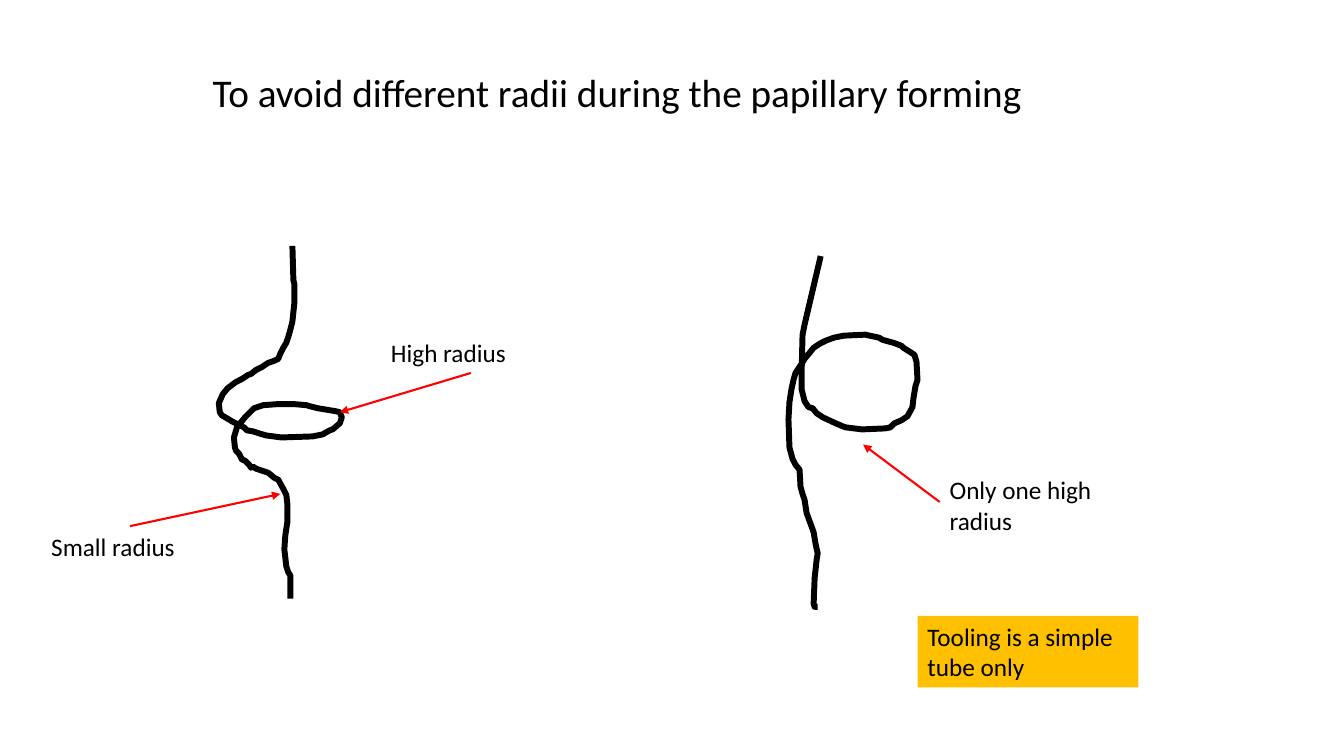
from lxml import etree
from pptx import Presentation
from pptx.dml.color import RGBColor
from pptx.enum.shapes import MSO_CONNECTOR, MSO_SHAPE
from pptx.enum.text import MSO_ANCHOR, MSO_AUTO_SIZE, PP_ALIGN
from pptx.oxml.ns import qn
from pptx.util import Inches, Pt

STRAIGHT = MSO_CONNECTOR.STRAIGHT
RECT = MSO_SHAPE.RECTANGLE
TOP = MSO_ANCHOR.TOP
LEFT = PP_ALIGN.LEFT
FIXED = MSO_AUTO_SIZE.NONE
UNIT = Inches(0.01)  # curve points are in hundredths of an inch


def color(code):
    return RGBColor.from_string(code)


def write(shape, text, box, size=18, ink="000000", fill=None):
    """Place the shape and fill it with left-aligned text."""
    shape.left, shape.top, shape.width, shape.height = map(Inches, box)
    frame = shape.text_frame
    frame.word_wrap = True
    frame.auto_size = FIXED
    frame.vertical_anchor = TOP
    para = frame.paragraphs[0]
    para.alignment = LEFT
    run = para.add_run()
    run.text = text
    run.font.name = "Calibri"
    run.font.size = Pt(size)
    run.font.color.rgb = color(ink)
    if fill:
        shape.shadow.inherit = False
        shape.fill.solid()
        shape.fill.fore_color.rgb = color(fill)
        shape.line.fill.background()


deck = Presentation()
deck.slide_width, deck.slide_height = Inches(13.33), Inches(7.5)
slide = deck.slides.add_slide(deck.slide_layouts[5])
shapes = slide.shapes

write(shapes.title, "To avoid different radii during the papillary forming",
      (2.01, 0.63, 8.37, 0.57), size=28)

# Cross-sections of the formed tube: two radii, then one
flat_loop = [
    (290, 244), (291, 278), (292, 282), (292, 300), (290, 319), (288, 327),
    (286, 334), (284, 340), (281, 345), (278, 351), (276, 356), (272, 358),
    (266, 360), (260, 364), (254, 367), (249, 371), (246, 372), (240, 376),
    (234, 379), (226, 385), (221, 391), (217, 400), (218, 409), (220, 412),
    (230, 418), (236, 421), (242, 424), (245, 427), (251, 428), (257, 430),
    (264, 432), (279, 434), (310, 433), (320, 431), (327, 427), (330, 426),
    (337, 420), (339, 414), (337, 409), (333, 408), (327, 407), (321, 406),
    (315, 405), (307, 403), (304, 402), (292, 401), (275, 401), (261, 402),
    (255, 404), (252, 405), (246, 411), (243, 414), (239, 419), (235, 424),
    (232, 434), (233, 444), (234, 447), (237, 450), (240, 456), (243, 457),
    (247, 461), (249, 464), (251, 463), (254, 465), (260, 467), (266, 469),
    (272, 474), (276, 476), (281, 485), (284, 491), (285, 500), (285, 518),
    (283, 531), (282, 545), (284, 562), (286, 568), (288, 571), (288, 594),
]
round_loop = [
    (814, 254), (798, 322), (796, 332), (795, 371), (795, 386), (798, 398),
    (802, 404), (806, 405), (810, 410), (816, 414), (829, 420), (836, 423),
    (839, 424), (855, 426), (878, 425), (883, 424), (887, 420), (894, 417),
    (900, 413), (905, 404), (906, 395), (908, 383), (910, 377), (909, 359),
    (907, 352), (904, 350), (896, 345), (894, 343), (886, 340), (882, 339),
    (875, 337), (872, 335), (858, 332), (837, 333), (827, 335), (819, 338),
    (813, 341), (807, 345), (803, 350), (798, 356), (795, 361), (789, 370),
    (787, 377), (785, 386), (783, 399), (782, 416), (783, 444), (786, 455),
    (789, 461), (793, 466), (794, 483), (796, 490), (798, 496), (800, 509),
    (803, 517), (807, 528), (809, 540), (811, 549), (810, 555), (808, 573),
    (807, 599), (808, 602), (811, 602),
]
for curve in (flat_loop, round_loop):
    pen = shapes.build_freeform(*curve[0], scale=UNIT)
    pen.add_line_segments(curve[1:], close=False)
    tube = pen.convert_to_shape()
    tube.shadow.inherit = False
    tube.fill.background()
    tube.line.color.rgb = color("000000")
    tube.line.width = Pt(4.25)

labels = [
    ("Small radius", (0.41, 5.22, 1.77, 0.4)),
    ("High radius", (3.78, 3.3, 1.77, 0.4)),
    ("Only one high radius", (9.32, 4.66, 1.77, 0.71)),
]
for text, box in labels:
    write(shapes.add_textbox(0, 0, 0, 0), text, box)

arrows = [
    (4.67, 3.7, 3.37, 4.09),
    (1.29, 5.22, 2.78, 4.9),
    (9.32, 4.98, 8.56, 4.41),
]
for ends in arrows:
    arrow = shapes.add_connector(STRAIGHT, *map(Inches, ends))
    arrow.line.color.rgb = color("FF0000")
    arrow.line.width = Pt(1.5)
    etree.SubElement(arrow.line._get_or_add_ln(), qn("a:tailEnd"), type="triangle")
    etree.SubElement(arrow._element.spPr, qn("a:effectLst"))

write(shapes.add_shape(RECT, 0, 0, 0, 0), "Tooling is a simple tube only",
      (9.1, 6.11, 2.19, 0.71), fill="FFC000")

deck.save("out.pptx")
